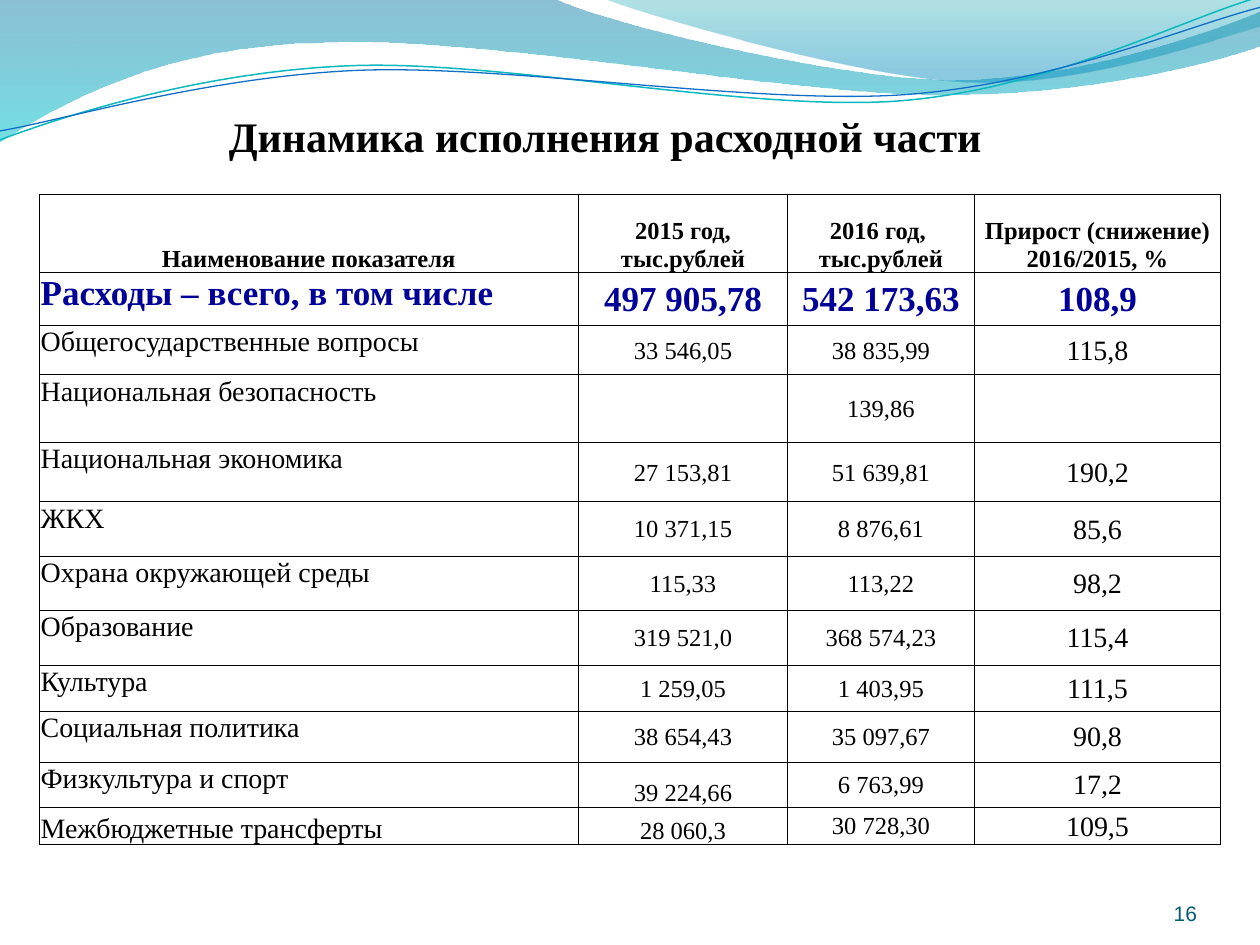
from dataclasses import dataclass

from lxml import etree
from pptx import Presentation
from pptx.dml.color import RGBColor
from pptx.enum.text import MSO_ANCHOR, PP_ALIGN
from pptx.oxml.ns import qn
from pptx.util import Cm, Pt

TOP, MIDDLE, BOTTOM = MSO_ANCHOR.TOP, MSO_ANCHOR.MIDDLE, MSO_ANCHOR.BOTTOM
LEFT, CENTER, RIGHT, JUSTIFY = (PP_ALIGN.LEFT, PP_ALIGN.CENTER,
                                PP_ALIGN.RIGHT, PP_ALIGN.JUSTIFY)


@dataclass(frozen=True)
class Theme:
    serif: str = "Times New Roman"
    sans: str = "Arial"
    black: str = "000000"
    total: str = "000099"
    number: str = "045D75"
    teal_line: str = "0AB8BF"
    blue_line: str = "0F6FC6"
    # Gradient stops: position, colour, opacity in percent
    wave: tuple = ((0, "0074A1", 45), (1, "00C6CF", 55))
    crest: tuple = ((0, "00A1A9", 30), (0.8, "008BBF", 45))
    title_size: int = 24
    total_size: int = 20
    body_size: int = 16
    value_size: int = 14
    number_size: int = 12
    border_width: float = 0.5


THEME = Theme()

# Outlines in cm: a start point, then segments (one point is a straight line,
# three points are a Bézier curve)
WAVE = [(-0.03, -0.03), [(11.18, -0.03)],
        [(12.09, 0.43), (16.87, 1.6), (19.25, 1.6)],
        [(21.67, 1.6), (24.33, 0.66), (25.4, 0.23)], [(25.43, 0.91)],
        [(24.97, 1.12), (22.1, 1.93), (18.95, 1.91)],
        [(15.8, 1.91), (9.7, 0.71), (6.53, 0.86)],
        [(3.28, 0.89), (1.17, 2.11), (-0.03, 2.87)]]
CREST = [(12.17, -0.03),
         [(12.93, 0.28), (17.32, 1.57), (19.53, 1.65)],
         [(21.74, 1.75), (24.41, 0.81), (25.4, 0.53)], [(25.4, 0)]]
# The two thin curves are given level and then tilted
CURVE_TILT = 357.3
TEAL_CURVE = [(-0.05, 2.22),
              [(1.19, 1.82), (4.02, 1.04), (7.05, 1.06)],
              [(10.05, 1.07), (15.02, 2.37), (18.08, 2.29)],
              [(21.13, 2.2), (23.87, 0.91), (25.41, 0.55)]]
BLUE_CURVE = [(-0.04, 2.04),
              [(1.16, 1.9), (4.18, 1.15), (7.2, 1.16)],
              [(10.25, 1.18), (15.13, 2.23), (18.18, 2.17)],
              [(21.21, 2.1), (23.93, 1.06), (25.45, 0.75)]]

COLUMN_WIDTHS = [10.87, 4.22, 3.76, 4.97]
ROW_HEIGHTS = [1.58, 1.07, 0.99, 1.37, 1.19, 1.1,
               1.09, 1.11, 0.93, 1.02, 0.91, 0.76]
ROWS = [
    ("Наименование показателя", "2015 год, тыс.рублей",
     "2016 год, \nтыс.рублей", "Прирост (снижение) 2016/2015, %"),
    ("Расходы – всего, в том числе", "497 905,78", "542 173,63", "108,9"),
    ("Общегосударственные вопросы", "33 546,05", "38 835,99", "115,8"),
    ("Национальная безопасность", "", "139,86", ""),
    ("Национальная экономика", "27 153,81", "51 639,81", "190,2"),
    ("ЖКХ", "10 371,15", "8 876,61", "85,6"),
    ("Охрана окружающей среды", "115,33", "113,22", "98,2"),
    ("Образование", "319 521,0", "368 574,23", "115,4"),
    ("Культура", "1 259,05", "1 403,95", "111,5"),
    ("Социальная политика", "38 654,43", "35 097,67", "90,8"),
    ("Физкультура и спорт", "39 224,66", "6 763,99", "17,2"),
    ("Межбюджетные трансферты", "28 060,3", "30 728,30", "109,5"),
]
LAST_ROW = len(ROWS) - 1
LOW_CELLS = {(LAST_ROW - 1, 1), (LAST_ROW, 0), (LAST_ROW, 1)}


def write_text(frame, text, align, size, color, font=THEME.serif, bold=False):
    frame.text = text
    for paragraph in frame.paragraphs:
        paragraph.alignment = align
        paragraph.font.name = font
        paragraph.font.size = Pt(size)
        paragraph.font.bold = bold
        paragraph.font.color.rgb = RGBColor.from_string(color)


def add_text(slide, left, top, width, height, *text_style, below=0, **options):
    """Add a text box whose text stands on the bottom, raised by `below`."""
    frame = slide.shapes.add_textbox(
        Cm(left), Cm(top), Cm(width), Cm(height)).text_frame
    frame.word_wrap = True
    frame.vertical_anchor = BOTTOM
    frame.margin_left = frame.margin_right = frame.margin_top = 0
    frame.margin_bottom = Cm(below)
    write_text(frame, *text_style, **options)


def add_outline(slide, outline, close):
    start, *segments = outline
    points = [(Cm(x), Cm(y)) for segment in segments for x, y in segment]
    builder = slide.shapes.build_freeform(Cm(start[0]), Cm(start[1]))
    builder.add_line_segments(points, close=close)
    shape = builder.convert_to_shape()
    shape.shadow.inherit = False

    # Join each three points of a curve into one Bézier segment
    lines = iter(list(shape._element.spPr.iter(qn("a:lnTo"))))
    for segment in segments:
        first, *others = [next(lines) for _ in segment]
        if others:
            first.tag = qn("a:cubicBezTo")
            for line in others:
                first.append(line[0])
                line.getparent().remove(line)
    return shape


def add_wave(slide, outline, stops):
    shape = add_outline(slide, outline, close=True)
    shape.line.fill.background()
    shape.fill.gradient()
    shape.fill.gradient_angle = 270
    for stop, (position, color, _) in zip(shape.fill.gradient_stops, stops):
        stop.position = position
        stop.color.rgb = RGBColor.from_string(color)
    colors = shape._element.spPr.iter(qn("a:srgbClr"))
    for element, (_, _, opacity) in zip(list(colors), stops):
        etree.SubElement(element, qn("a:alpha")).set("val", str(opacity * 1000))


def add_curve(slide, outline, color, width):
    shape = add_outline(slide, outline, close=False)
    shape.rotation = CURVE_TILT
    shape.fill.background()
    shape.line.color.rgb = RGBColor.from_string(color)
    shape.line.width = Pt(width)


def set_borders(cell):
    properties = cell._tc.get_or_add_tcPr()
    for side in ("a:lnL", "a:lnR", "a:lnT", "a:lnB"):
        line = etree.SubElement(properties, qn(side),
                                w=str(Pt(THEME.border_width)))
        fill = etree.SubElement(line, qn("a:solidFill"))
        etree.SubElement(fill, qn("a:srgbClr"), val=THEME.black)


def fill_cell(cell, text, row, column):
    margin = 0 if row == 0 else Cm(0.03)
    cell.margin_left = cell.margin_right = cell.margin_top = margin
    cell.margin_bottom = 0
    set_borders(cell)
    cell.fill.background()

    # Header row, total row, then the body with names, values and growth
    color, align = THEME.black, CENTER
    if row == 0:
        size, anchor = THEME.value_size, BOTTOM
    else:
        size = THEME.value_size if column in (1, 2) else THEME.body_size
        anchor = TOP if column == 0 else MIDDLE
        if column == 0:
            align = LEFT if row in (1, LAST_ROW) else JUSTIFY
        if row == 1:
            size, color = THEME.total_size, THEME.total
    cell.vertical_anchor = BOTTOM if (row, column) in LOW_CELLS else anchor
    if text:
        write_text(cell.text_frame, text, align, size, color, bold=row < 2)


def add_expense_table(slide):
    table = slide.shapes.add_table(
        len(ROWS), len(COLUMN_WIDTHS), Cm(0.79), Cm(3.91),
        Cm(sum(COLUMN_WIDTHS)), Cm(sum(ROW_HEIGHTS))).table
    table.first_row = table.horz_banding = False
    for column, width in zip(table.columns, COLUMN_WIDTHS):
        column.width = Cm(width)
    for r, (height, texts) in enumerate(zip(ROW_HEIGHTS, ROWS)):
        table.rows[r].height = Cm(height)
        for c, text in enumerate(texts):
            fill_cell(table.cell(r, c), text, r, c)


def main():
    deck = Presentation()
    deck.slide_width, deck.slide_height = Cm(25.4), Cm(19.05)
    slide = deck.slides.add_slide(deck.slide_layouts[6])

    # Waves along the top edge
    add_wave(slide, WAVE, THEME.wave)
    add_wave(slide, CREST, THEME.crest)
    add_curve(slide, TEAL_CURVE, THEME.teal_line, 0.85)
    add_curve(slide, BLUE_CURVE, THEME.blue_line, 0.75)

    # Title, page number and table
    add_text(slide, 0, 2.59, 24.4, 1.78,
             "Динамика исполнения расходной части", CENTER,
             THEME.title_size, THEME.black, bold=True, below=1.24)
    add_text(slide, 18.21, 17.35, 5.92, 1.32, "16", RIGHT,
             THEME.number_size, THEME.number, font=THEME.sans)
    add_expense_table(slide)

    deck.save("out.pptx")


if __name__ == "__main__":
    main()
